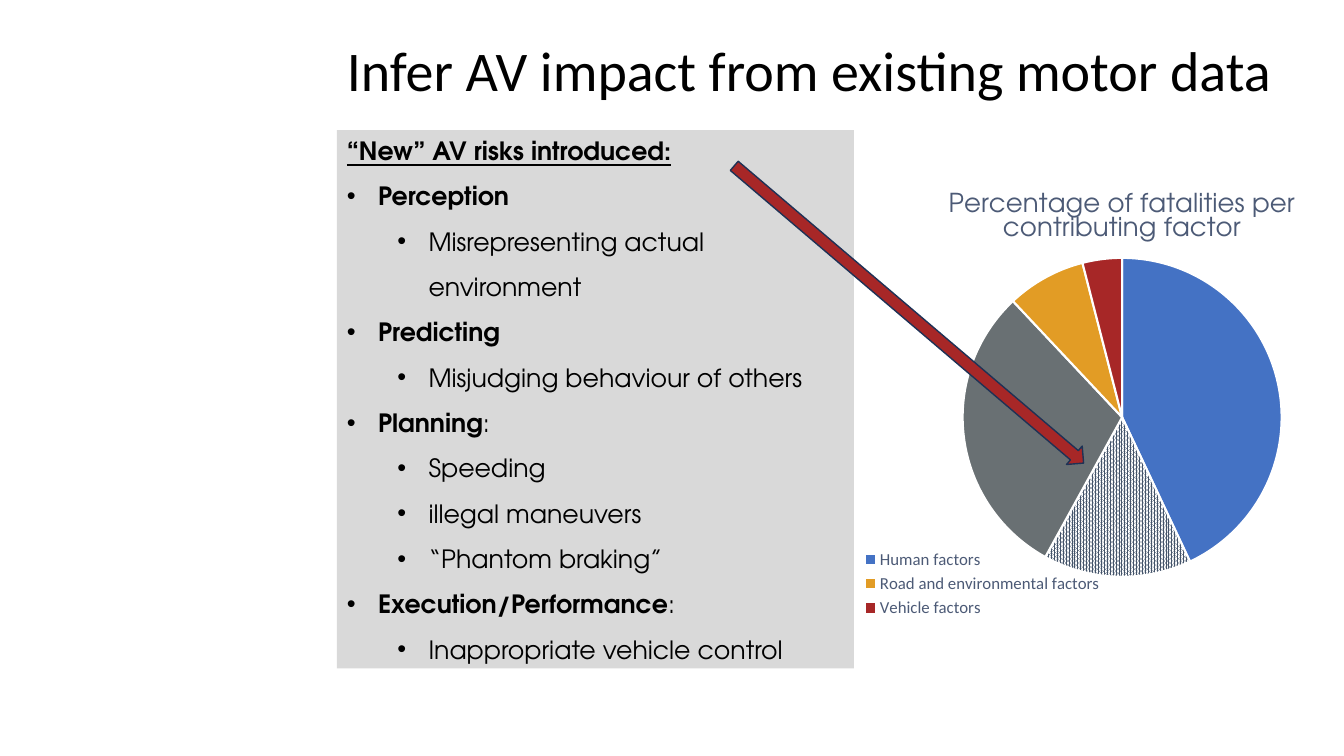
from lxml import etree
from pptx import Presentation
from pptx.chart.data import CategoryChartData
from pptx.dml.color import RGBColor
from pptx.enum.chart import XL_CHART_TYPE, XL_LEGEND_POSITION
from pptx.enum.dml import MSO_PATTERN
from pptx.enum.shapes import MSO_SHAPE
from pptx.enum.text import MSO_ANCHOR, MSO_AUTO_SIZE, PP_ALIGN
from pptx.oxml import parse_xml
from pptx.oxml.ns import nsdecls, qn
from pptx.util import Inches, Pt

PIE, BOTTOM = XL_CHART_TYPE.PIE, XL_LEGEND_POSITION.BOTTOM
PATTERN, ARROW = MSO_PATTERN.PERCENT_80, MSO_SHAPE.RIGHT_ARROW
TOP, MIDDLE = MSO_ANCHOR.TOP, MSO_ANCHOR.MIDDLE
LEFT, FIXED = PP_ALIGN.LEFT, MSO_AUTO_SIZE.NONE

BLACK = RGBColor(0x00, 0x00, 0x00)
WHITE = RGBColor(0xFF, 0xFF, 0xFF)
PANEL = RGBColor(0xD9, 0xD9, 0xD9)
SLATE = RGBColor(0x4C, 0x5A, 0x76)
HATCH = RGBColor(0x44, 0x54, 0x6A)
BLUE = RGBColor(0x44, 0x72, 0xC4)
GREY = RGBColor(0x69, 0x70, 0x73)
AMBER = RGBColor(0xE2, 0x9C, 0x25)
RED = RGBColor(0xA7, 0x27, 0x27)
NAVY = RGBColor(0x1E, 0x32, 0x56)
PLAIN, DISPLAY = "Calibri", "TeX Gyre Adventor"

TITLE = "Infer AV impact from existing motor data"
RISKS_HEADING = "“New” AV risks introduced:"
RISKS = [
    ("Perception", "", ["Misrepresenting actual environment"]),
    ("Predicting", "", ["Misjudging behaviour of others"]),
    ("Planning", ":", ["Speeding", "illegal maneuvers", "“Phantom braking”"]),
    ("Execution/Performance", ":", ["Inappropriate vehicle control"]),
]
CHART_TITLE = "Percentage of fatalities per contributing factor"
FACTORS = [
    ("Human factors", 43, BLUE),
    ("", 15, None),
    ("", 30, GREY),
    ("Road and environmental factors", 8, AMBER),
    ("Vehicle factors", 4, RED),
]
TITLE_BOX = (3.34, 0, 9.79, 1.45)
RISKS_BOX = (3.34, 1.29, 5.13, 5.34)
CHART_BOX = (8.47, 1.7, 5.32, 4.52)
ARROW_BOX = (6.74, 3, 4.55, 0.24)
PIE_AREA = (0.2, 0.19, 0.6, 0.7)
LEGEND_AREA = (0.01, 0.82, 0.46, 0.17)


def place(item, box):
    item.left, item.top, item.width, item.height = map(Inches, box)


def style(font, size, name, color, bold=None):
    font.size, font.name, font.bold = Pt(size), name, bold
    font.color.rgb = color


def add_bullet(paragraph, level):
    paragraph.level = level
    properties = paragraph._p.get_or_add_pPr()
    properties.set("marL", str(Inches(0.31 + 0.5 * level)))
    properties.set("indent", str(Inches(-0.31)))
    etree.SubElement(properties, qn("a:buFont")).set("typeface", "Arial")
    etree.SubElement(properties, qn("a:buChar")).set("char", "•")
    paragraph.line_spacing = 1.5


def manual_layout(area, inner=False):
    target = '<c:layoutTarget val="inner"/>' if inner else ""
    modes = '<c:xMode val="edge"/><c:yMode val="edge"/>'
    sides = "".join(f'<c:{side} val="{share}"/>' for side, share in zip("xywh", area))
    return parse_xml(f'<c:layout {nsdecls("c")}><c:manualLayout>{target}{modes}{sides}'
                     '</c:manualLayout></c:layout>')


def set_layout(parent, layout, index):
    for old in parent.findall(qn("c:layout")):
        parent.remove(old)
    parent.insert(index, layout)


def add_risks(panel):
    place(panel, RISKS_BOX)
    panel.fill.solid()
    panel.fill.fore_color.rgb = PANEL
    frame = panel.text_frame
    frame.auto_size, frame.vertical_anchor, frame.word_wrap = FIXED, TOP, True
    heading = frame.paragraphs[0]
    heading.text = RISKS_HEADING
    properties = heading._p.get_or_add_pPr()
    properties.set("marL", "0")
    properties.set("indent", "0")
    etree.SubElement(properties, qn("a:buNone"))
    style(heading.font, 18, DISPLAY, BLACK, True)
    heading.font.underline = True
    heading.space_before = Pt(0)
    for risk, suffix, examples in RISKS:
        for level, text in [(0, risk)] + [(1, example) for example in examples]:
            paragraph = frame.add_paragraph()
            add_bullet(paragraph, level)
            paragraph.space_before = Pt(0)
            style(paragraph.font, 18, DISPLAY, BLACK)
            run = paragraph.add_run()
            run.text, run.font.bold = text, level == 0
            if level == 0 and suffix:
                paragraph.add_run().text = suffix


def add_fatalities(slide):
    data = CategoryChartData()
    data.categories = [label for label, _, _ in FACTORS]
    data.add_series("", [share for _, share, _ in FACTORS])
    chart = slide.shapes.add_chart(PIE, *map(Inches, CHART_BOX), data).chart
    style(chart.font, 10, PLAIN, BLACK)
    chart.has_title = True
    heading = chart.chart_title.text_frame.paragraphs[0]
    heading.text = CHART_TITLE
    style(heading.runs[0].font, 18.6, DISPLAY, SLATE, False)
    chart.has_legend = True
    legend = chart.legend
    legend.position, legend.include_in_layout = BOTTOM, False
    style(legend.font, 12, PLAIN, SLATE)
    pie = chart.plots[0]
    pie.vary_by_categories = True
    hidden = 0
    for index, (label, _, color) in enumerate(FACTORS):
        slice_format = pie.series[0].points[index].format
        fill = slice_format.fill
        if color is None:
            fill.patterned()
            fill.pattern = PATTERN
            fill.fore_color.rgb, fill.back_color.rgb = HATCH, WHITE
        else:
            fill.solid()
            fill.fore_color.rgb = color
        slice_format.line.color.rgb = WHITE
        slice_format.line.width = Pt(1.5)
        if not label:
            hidden += 1
            legend._element.insert(hidden, parse_xml(
                f'<c:legendEntry {nsdecls("c")}><c:idx val="{index}"/>'
                '<c:delete val="1"/></c:legendEntry>'))
    set_layout(legend._element, manual_layout(LEGEND_AREA), hidden + 1)
    set_layout(chart._chartSpace.chart.plotArea, manual_layout(PIE_AREA, True), 0)


def main():
    deck = Presentation()
    deck.slide_width, deck.slide_height = Inches(13.33), Inches(7.5)
    slide = deck.slides.add_slide(deck.slide_layouts[1])
    title = slide.shapes.title
    place(title, TITLE_BOX)
    title.text_frame.text = TITLE
    title.text_frame.vertical_anchor = MIDDLE
    headline = title.text_frame.paragraphs[0]
    headline.alignment, headline.line_spacing = LEFT, 0.9
    style(headline.font, 40, PLAIN, BLACK)
    add_risks(slide.placeholders[1])
    add_fatalities(slide)
    arrow = slide.shapes.add_shape(ARROW, *map(Inches, ARROW_BOX))
    arrow.rotation = 40.4
    arrow.shadow.inherit = False
    arrow.fill.solid()
    arrow.fill.fore_color.rgb = RED
    arrow.line.color.rgb, arrow.line.width = NAVY, Pt(1)
    deck.save("out.pptx")


if __name__ == "__main__":
    main()
